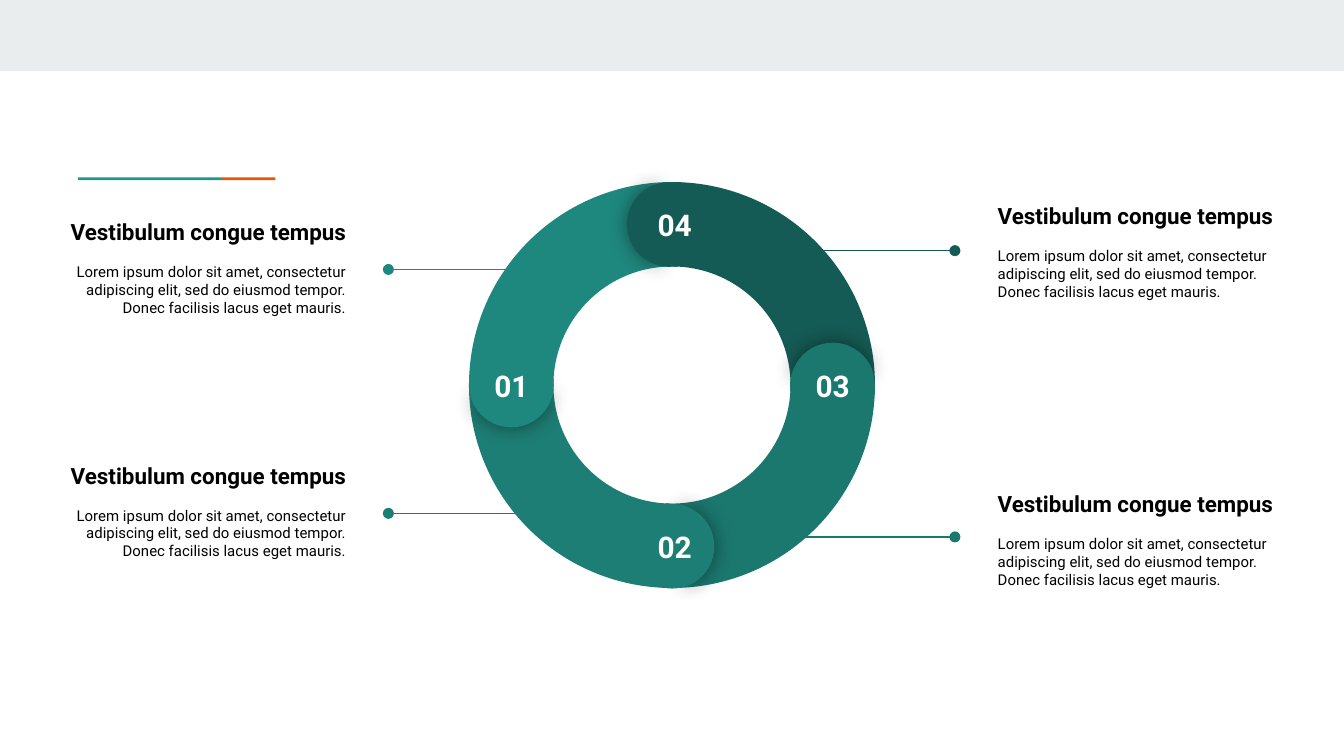
from lxml.etree import SubElement
from pptx import Presentation
from pptx.dml.color import RGBColor
from pptx.enum.shapes import MSO_CONNECTOR, MSO_SHAPE
from pptx.enum.text import MSO_ANCHOR as Anchor, PP_ALIGN as Align
from pptx.oxml.ns import qn
from pptx.util import Emu, Pt

PX_PER_INCH = 200
SCALE = 914400 // PX_PER_INCH
FONT = "Roboto"
COLORS = {
    "band": "E9EDEE", "teal": "1A9988", "orange": "EB5600",
    "black": "000000", "white": "FFFFFF",
    "01": "1F887E", "02": "1D7E75", "03": "1B786F", "04": "155B55",
}
TITLE = "Vestibulum congue tempus"
BODY = ("Lorem ipsum dolor sit amet, consectetur adipiscing elit, "
        "sed do eiusmod tempor. Donec facilisis lacus eget mauris.")

RING = (698, 271, 604, 604)
RING_THICKNESS = 0.208
CAP_SIZE = 126
TURNS = {"02": 180, "01": 270, "04": 0, "03": 90}
CAPS = {
    "03": (1176, 510, 1184),
    "02": (937, 750, 949),
    "01": (698, 510, 706),
    "04": (933, 271, 949),
}
CALLOUTS = [
    ("01", 71, 257, Align.RIGHT, (806, 578, 401)),
    ("02", 71, 619, Align.RIGHT, (864, 578, 764)),
    ("04", 1465, 233, Align.LEFT, (1140, 1421, 373)),
    ("03", 1465, 661, Align.LEFT, (1140, 1421, 799)),
]


def px(value):
    return Emu(value * SCALE)


def color(name):
    return RGBColor.from_string(COLORS[name])


def write(paragraph, text, size=8, bold=False, ink="black", align=Align.LEFT,
          before=0, after=0):
    paragraph.alignment = align
    paragraph.space_before = Pt(before)
    paragraph.space_after = Pt(after)
    run = paragraph.add_run()
    run.text = text
    run.font.name = FONT
    run.font.size = Pt(size)
    run.font.bold = bold
    run.font.color.rgb = color(ink)


class Canvas:
    def __init__(self, slide):
        self.slide = slide

    def shape(self, kind, left, top, width, height, fill, rotation=0):
        shape = self.slide.shapes.add_shape(
            kind, px(left), px(top), px(width), px(height))
        shape.rotation = rotation
        shape.fill.solid()
        shape.fill.fore_color.rgb = color(fill)
        shape.line.fill.background()
        shape.shadow.inherit = False
        return shape

    def arc(self, kind, box, fill, rotation, start, end):
        shape = self.shape(kind, *box, fill, rotation % 360)
        for index, degrees in enumerate((start, end)):
            shape.adjustments[index] = degrees * 0.6
        return shape

    def ring_segment(self, name, turn):
        segment = self.arc(MSO_SHAPE.BLOCK_ARC, RING, name, turn + 60, 210.4, 302.9)
        segment.adjustments[2] = RING_THICKNESS

    def cap(self, name, left, top, turn):
        box = (left, top, CAP_SIZE, CAP_SIZE)
        shaded = self.arc(MSO_SHAPE.PIE, box, name, turn + 0.7, 103.2, 249.9)
        self.glow(shaded)
        self.arc(MSO_SHAPE.PIE, box, name, turn + 180, 67.1, 286.4)

    def glow(self, shape):
        effects = shape._element.spPr.find(qn("a:effectLst"))
        shadow = SubElement(effects, qn("a:outerShdw"), blurRad=str(Pt(11.2)),
                            dist="0", dir="0", algn="ctr", rotWithShape="0")
        tint = SubElement(shadow, qn("a:srgbClr"), val=COLORS["black"])
        SubElement(tint, qn("a:alpha"), val="43000")

    def text_box(self, left, top, width, height, anchor=Anchor.TOP):
        box = self.slide.shapes.add_textbox(px(left), px(top), px(width), px(height))
        frame = box.text_frame
        frame.word_wrap = True
        frame.vertical_anchor = anchor
        frame.margin_left = frame.margin_right = px(20)
        frame.margin_top = frame.margin_bottom = px(20)
        return frame

    def number(self, name, left, top):
        frame = self.text_box(left, top, 110, 58)
        write(frame.paragraphs[0], name, size=16, bold=True, ink="white",
              align=Align.CENTER)

    def description(self, left, top, align):
        frame = self.text_box(left, top, 464, 282, Anchor.MIDDLE)
        write(frame.paragraphs[0], TITLE, size=12, bold=True, align=align)
        write(frame.add_paragraph(), BODY, align=align, before=9.4, after=16)

    def pointer(self, name, start, end, level):
        line = self.slide.shapes.add_connector(
            MSO_CONNECTOR.STRAIGHT, px(start), px(level), px(end), px(level))
        line.line.width = Pt(0.75)
        line.line.color.rgb = color(name)
        SubElement(line.line._get_or_add_ln(), qn("a:tailEnd"), type="oval")
        SubElement(line._element.spPr, qn("a:effectLst"))


def main():
    presentation = Presentation()
    presentation.slide_width, presentation.slide_height = px(2000), px(1125)
    canvas = Canvas(presentation.slides.add_slide(presentation.slide_layouts[6]))

    canvas.shape(MSO_SHAPE.RECTANGLE, 0, 0, 2000, 106, "band")
    canvas.shape(MSO_SHAPE.RECTANGLE, 329, 264, 81, 4, "orange")
    canvas.shape(MSO_SHAPE.RECTANGLE, 116, 264, 213, 4, "teal")

    for name, turn in TURNS.items():
        canvas.ring_segment(name, turn)
    for name, (left, top, number_left) in CAPS.items():
        canvas.cap(name, left, top, TURNS[name])
        canvas.number(name, number_left, top + 17)
    for name, left, top, align, pointer in CALLOUTS:
        canvas.description(left, top, align)
        canvas.pointer(name, *pointer)

    presentation.save("out.pptx")


if __name__ == "__main__":
    main()
